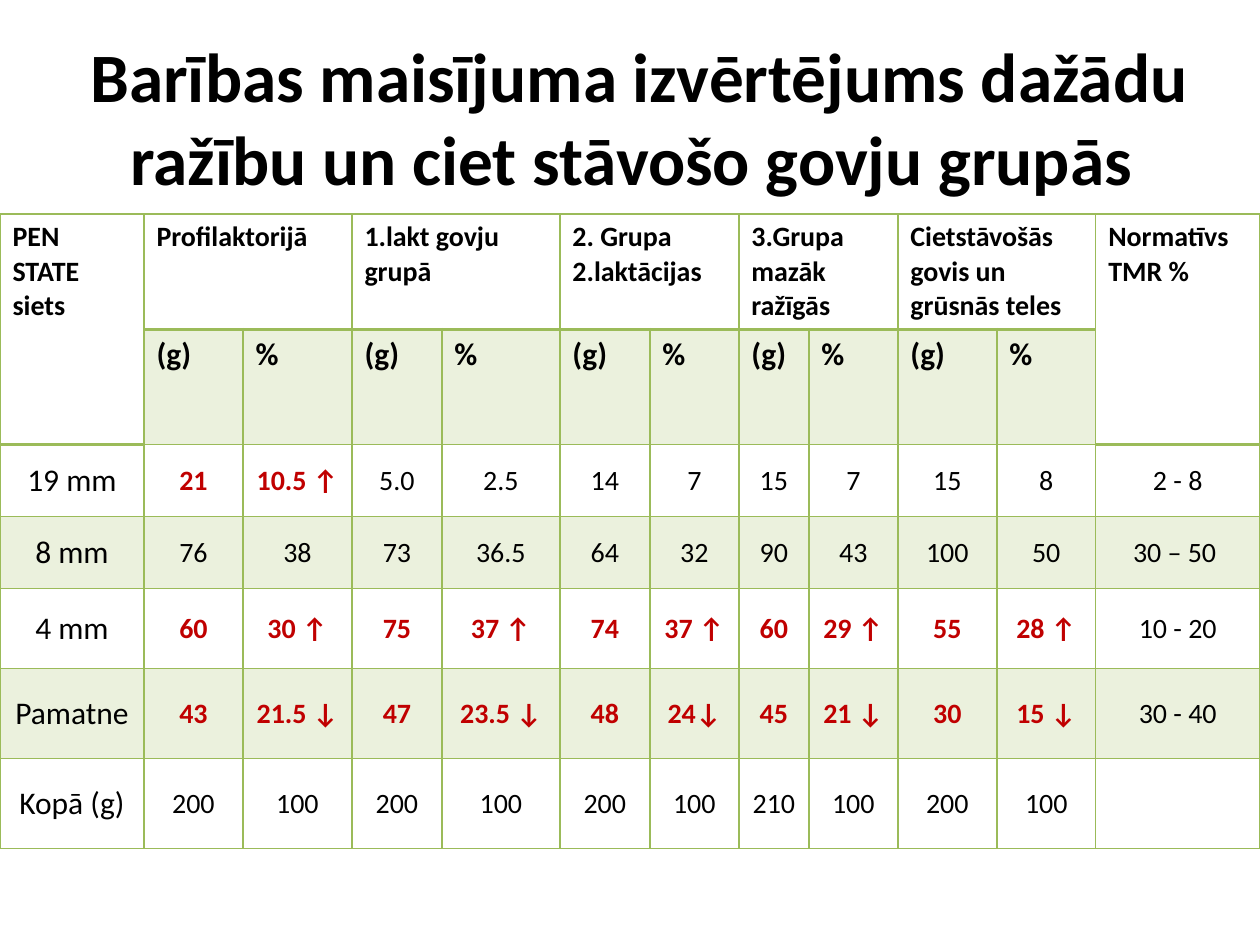
from lxml import etree
from pptx import Presentation
from pptx.dml.color import RGBColor
from pptx.enum.text import MSO_ANCHOR, PP_ALIGN
from pptx.oxml.ns import qn
from pptx.util import Emu, Pt

LEFT, CENTER = PP_ALIGN.LEFT, PP_ALIGN.CENTER
TOP, MIDDLE = MSO_ANCHOR.TOP, MSO_ANCHOR.MIDDLE

# Content
TITLE = "Barības maisījuma izvērtējums dažādu ražību un ciet stāvošo govju grupās "
SIEVE = "PEN STATE  siets"
GROUPS = ["Profilaktorijā", "1.lakt govju grupā", "2. Grupa 2.laktācijas",
          "3.Grupa\nmazāk ražīgās", "Cietstāvošās\ngovis un grūsnās teles"]
NORM = "Normatīvs TMR %"
UNITS = ["(g)", "%"]
ROWS = [
    ["19 mm", "21", "10.5 ↑", "5.0", "2.5", "14", "7", "15", "7", "15", "8", "2 - 8"],
    ["8 mm", "76", "38", "73", "36.5", "64", "32", "90", "43", "100", "50", "30 – 50 "],
    ["4 mm", "60", "30 ↑", "75", "37 ↑", "74", "37 ↑", "60", "29 ↑", "55", "28 ↑", "10 - 20"],
    ["Pamatne", "43", "21.5 ↓", "47", "23.5 ↓", "48", "24↓", "45", "21 ↓", "30", "15 ↓",
     "30 - 40"],
    ["Kopā (g)", "200", "100", "200", "100", "200", "100", "210", "100", "200", "100", ""],
]

# Layout in px
PX = 914400 // 126
SLIDE = (1260, 945)
TITLE_BOX = (44, 38, 1191, 157)
TABLE_TOP = 214
COLUMNS = [144, 99, 109, 90, 118, 90, 89, 70, 89, 99, 99, 164]
HEIGHTS = [115, 71, 72, 72, 80, 90, 90]
LAST = len(COLUMNS) - 1

THEME = {
    "font": "Calibri", "text": "000000", "alert": "C00000", "green": "9BBB59",
    "band_alpha": 20, "title": 39.6, "large": 18, "small": 16,
    "line": 1, "heavy": 2,
}


def px(value):
    return Emu(value * PX)


def write(holder, text, size=THEME["small"], color=THEME["text"], bold=False,
          align=LEFT):
    """Fill a text frame, one paragraph per line of text."""
    frame = holder.text_frame
    frame.word_wrap = True
    for index, line in enumerate(text.split("\n")):
        para = frame.paragraphs[0] if index == 0 else frame.add_paragraph()
        para.alignment = align
        para.font.size = Pt(size)
        if not line:
            continue
        span = para.add_run()
        span.text = line
        span.font.name = THEME["font"]
        span.font.size = Pt(size)
        span.font.bold = bold
        span.font.color.rgb = RGBColor.from_string(color)


def add_borders(cell, top, bottom):
    sides = {"lnL": THEME["line"], "lnR": THEME["line"], "lnT": top, "lnB": bottom}
    properties = cell._tc.get_or_add_tcPr()
    for side, width in sides.items():
        line = etree.SubElement(properties, qn("a:" + side), w=str(Pt(width)))
        fill = etree.SubElement(line, qn("a:solidFill"))
        etree.SubElement(fill, qn("a:srgbClr"), val=THEME["green"])


def fill_cell(cell, banded):
    if not banded:
        cell.fill.background()
        return
    cell.fill.solid()
    cell.fill.fore_color.rgb = RGBColor.from_string(THEME["green"])
    color = cell._tc.tcPr.find(qn("a:solidFill")).find(qn("a:srgbClr"))
    etree.SubElement(color, qn("a:alpha"), val=str(THEME["band_alpha"] * 1000))


def heavy_below(row, column):
    """The header ends with a heavy line; its outer cells span two rows."""
    return row == 0 or (row == 1 and column in (0, LAST))


def style_grid(table):
    for row in range(len(HEIGHTS)):
        for column in range(len(COLUMNS)):
            cell = table.cell(row, column)
            top = THEME["heavy" if row and heavy_below(row - 1, column) else "line"]
            bottom = THEME["heavy" if heavy_below(row, column) else "line"]
            add_borders(cell, top, bottom)
            fill_cell(cell, row % 2 == 1 and not (row == 1 and column in (0, LAST)))
            cell.vertical_anchor = TOP if row < 2 else MIDDLE


def write_header(table):
    for column, text in ((0, SIEVE), (LAST, NORM)):
        table.cell(0, column).merge(table.cell(1, column))
        write(table.cell(0, column), text, bold=True)
    for index, group in enumerate(GROUPS):
        first = 1 + 2 * index
        table.cell(0, first).merge(table.cell(0, first + 1))
        write(table.cell(0, first), group, bold=True)
        for offset, unit in enumerate(UNITS):
            write(table.cell(1, first + offset), unit, size=THEME["large"], bold=True)


def write_body(table):
    for row, values in enumerate(ROWS, start=2):
        for column, text in enumerate(values):
            # An arrow on the percentage marks both values of the group
            percent = values[column + column % 2] if 0 < column < LAST else ""
            alert = "↑" in percent or "↓" in percent
            write(table.cell(row, column), text, align=CENTER, bold=alert,
                  size=THEME["small" if column else "large"],
                  color=THEME["alert" if alert else "text"])


def main():
    deck = Presentation()
    deck.slide_width, deck.slide_height = map(px, SLIDE)
    page = deck.slides.add_slide(deck.slide_layouts[5])

    # Title
    title = page.shapes.title
    title.left, title.top, title.width, title.height = map(px, TITLE_BOX)
    title.text_frame.vertical_anchor = MIDDLE
    write(title, TITLE, size=THEME["title"], bold=True, align=CENTER)

    # Table
    frame = page.shapes.add_table(len(HEIGHTS), len(COLUMNS), 0, px(TABLE_TOP),
                                  px(sum(COLUMNS)), px(sum(HEIGHTS)))
    table = frame.table
    table.first_row = table.horz_banding = False
    for column, width in zip(table.columns, COLUMNS):
        column.width = px(width)
    for row, height in zip(table.rows, HEIGHTS):
        row.height = px(height)
    style_grid(table)
    write_header(table)
    write_body(table)

    deck.save("out.pptx")


if __name__ == "__main__":
    main()
